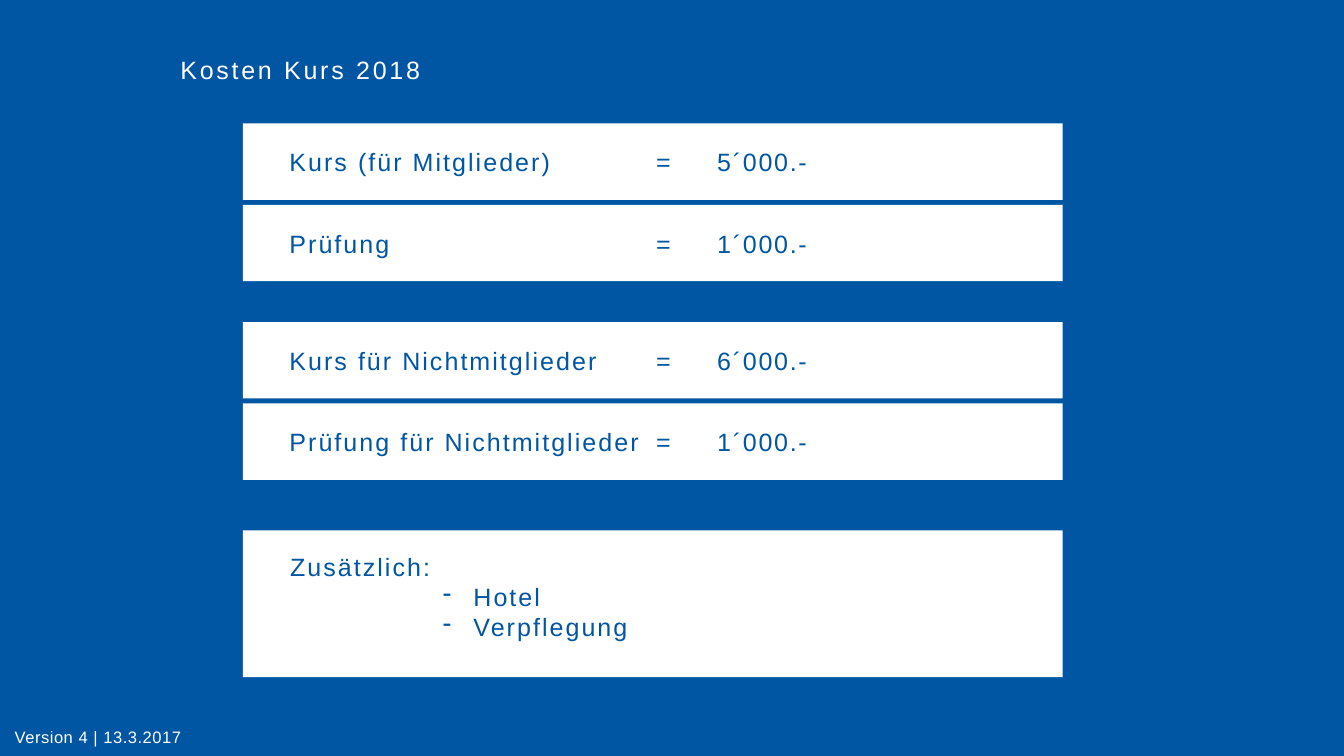
from lxml import etree
from pptx import Presentation
from pptx.dml.color import RGBColor
from pptx.enum.shapes import MSO_SHAPE
from pptx.enum.text import MSO_ANCHOR, MSO_AUTO_SIZE, PP_ALIGN
from pptx.oxml.ns import qn
from pptx.util import Inches, Pt

WIDTH, HEIGHT = Inches(21.99), Inches(12.37)
RECTANGLE = MSO_SHAPE.RECTANGLE
TOP, MIDDLE = MSO_ANCHOR.TOP, MSO_ANCHOR.MIDDLE
NO_AUTOFIT = MSO_AUTO_SIZE.NONE
LEFT = PP_ALIGN.LEFT
BLUE, WHITE = "0056A3", "FFFFFF"

PANEL_LEFT, PANEL_WIDTH = 18.08, 60.98
FIRST_ROW, ROW_HEIGHT = 16.33, 10.1
ROW_PITCH, GROUP_PITCH = 10.77, 26.27
PRICE_TABS = (6, 7)

PRICE_GROUPS = [
    [("Kurs (für Mitglieder)", "5´000.-"), ("Prüfung", "1´000.-")],
    [("Kurs für Nichtmitglieder", "6´000.-"),
     ("Prüfung für Nichtmitglieder", "1´000.-")],
]
EXTRAS = ["Hotel", "Verpflegung"]


def color(value):
    return RGBColor.from_string(value)


def area(left, top, width, height):
    return (round(WIDTH * left / 100), round(HEIGHT * top / 100),
            round(WIDTH * width / 100), round(HEIGHT * height / 100))


def set_values(target, values):
    for name, value in values.items():
        setattr(target, name, value)


def format_frame(frame, anchor=TOP, left=0, top=0):
    set_values(frame, {
        "auto_size": NO_AUTOFIT, "word_wrap": True, "vertical_anchor": anchor,
        "margin_left": Inches(left), "margin_top": Inches(top),
        "margin_right": 0, "margin_bottom": 0,
    })


def add_text(paragraph, text, fill, spacing, size=29.5):
    paragraph.alignment = LEFT
    run = paragraph.add_run()
    run.text = text
    set_values(run.font, {"name": "Arial", "size": Pt(size), "bold": False})
    run.font.color.rgb = color(fill)
    run.font._element.set("spc", str(round(spacing * 100)))


def add_tabs(paragraph, positions):
    tab_list = etree.SubElement(paragraph._p.get_or_add_pPr(), qn("a:tabLst"))
    for position in positions:
        etree.SubElement(tab_list, qn("a:tab"), pos=str(Inches(position)), algn="l")


def add_dash(paragraph):
    properties = paragraph._p.get_or_add_pPr()
    properties.set("marL", str(Inches(3)))
    properties.set("indent", str(Inches(-0.5)))
    etree.SubElement(properties, qn("a:buChar"), char="-")


def add_panel(slide, top, height):
    shape = slide.shapes.add_shape(
        RECTANGLE, *area(PANEL_LEFT, top, PANEL_WIDTH, height))
    shape.shadow.inherit = False
    shape.fill.solid()
    shape.fill.fore_color.rgb = color(WHITE)
    shape.line.fill.background()
    return shape.text_frame


def add_title(slide, text):
    title = slide.shapes.title
    position = area(13.42, 7.19, 25.6, 4.04)
    set_values(title, dict(zip(("left", "top", "width", "height"), position)))
    format_frame(title.text_frame)
    add_text(title.text_frame.paragraphs[0], text, WHITE, 3.2)


def add_price_row(slide, top, label, price):
    frame = add_panel(slide, top, ROW_HEIGHT)
    format_frame(frame, MIDDLE, left=0.76)
    paragraph = frame.paragraphs[0]
    add_tabs(paragraph, PRICE_TABS)
    add_text(paragraph, f"{label}\t=\t", BLUE, 2.4)
    add_text(paragraph, price, BLUE, 2)


def add_extras(slide, heading, items):
    frame = add_panel(slide, 70.17, 19.4)
    format_frame(frame, left=0.77, top=0.34)
    add_text(frame.paragraphs[0], heading, BLUE, 2.4)
    for item in items:
        paragraph = frame.add_paragraph()
        add_dash(paragraph)
        add_text(paragraph, item, BLUE, 2.4)


def add_version(slide, text):
    frame = slide.shapes.add_textbox(*area(1.09, 96.44, 28.1, 2.34)).text_frame
    format_frame(frame)
    paragraph = frame.paragraphs[0]
    paragraph.line_spacing = Pt(20.9)
    add_text(paragraph, text, WHITE, 0.6, size=19.5)


def main():
    presentation = Presentation()
    set_values(presentation, {"slide_width": WIDTH, "slide_height": HEIGHT})
    slide = presentation.slides.add_slide(
        presentation.slide_layouts.get_by_name("Title Only"))
    slide.background.fill.solid()
    slide.background.fill.fore_color.rgb = color(BLUE)

    add_title(slide, "Kosten Kurs 2018")
    for group_index, group in enumerate(PRICE_GROUPS):
        for row_index, (label, price) in enumerate(group):
            top = FIRST_ROW + group_index * GROUP_PITCH + row_index * ROW_PITCH
            add_price_row(slide, top, label, price)
    add_extras(slide, "Zusätzlich:", EXTRAS)
    add_version(slide, "Version 4 | 13.3.2017")
    presentation.save("out.pptx")


if __name__ == "__main__":
    main()
